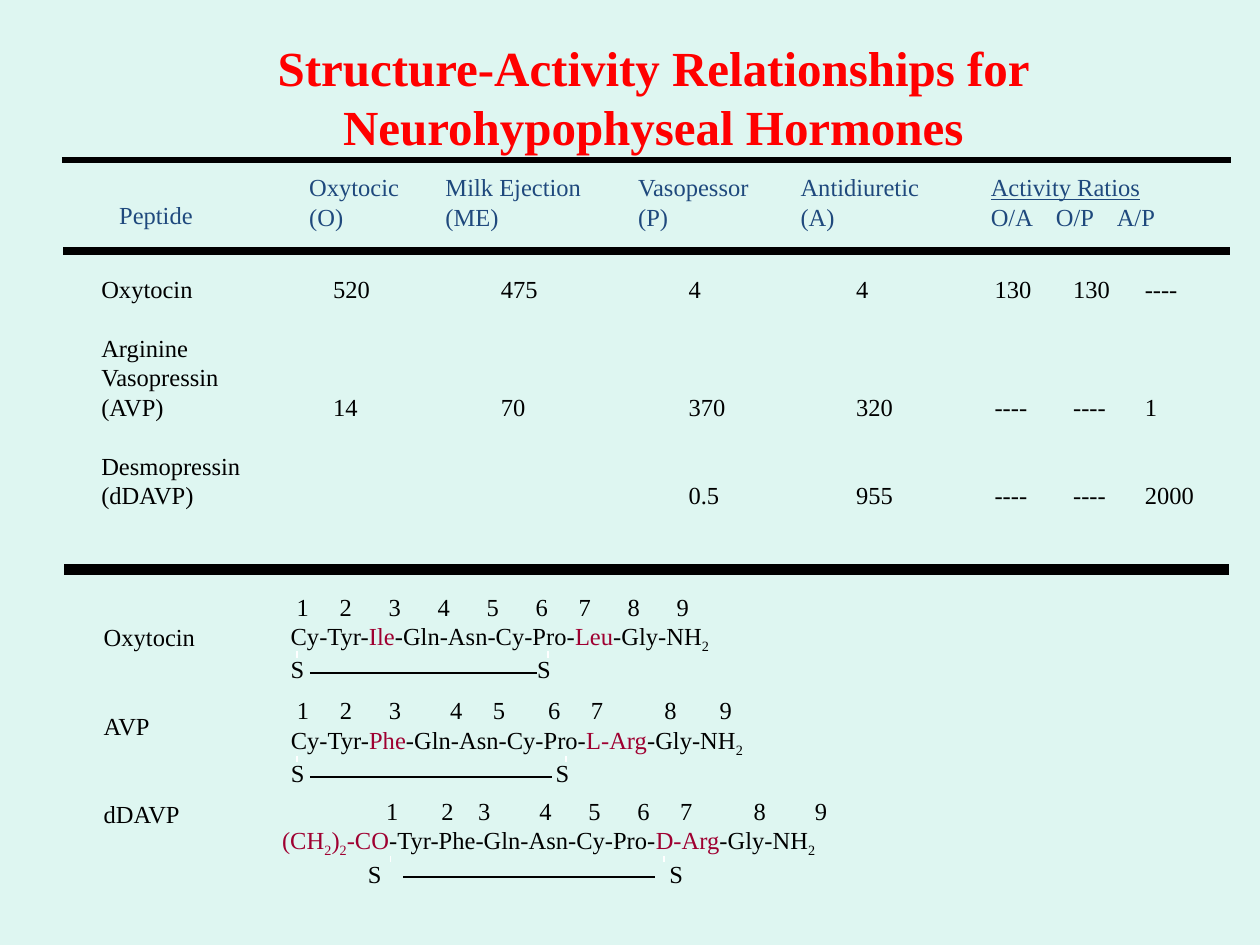
from itertools import accumulate

from lxml import etree
from pptx import Presentation
from pptx import util as u
from pptx.dml import color
from pptx.enum import shapes, text
from pptx.oxml import ns

INK, BLUE, RED, CRIMSON, WHITE = "000000", "1F497D", "FF0000", "9F0031", "FFFFFF"
BACKGROUND = "DEF6F1"
LINE = 16.86
SPACE, DIGIT = 3.5, 7


def rgb(value):
    return color.RGBColor.from_string(value)


class Deck:
    body = {"name": "Times New Roman", "size": u.Pt(14)}
    heading = {"name": "Times New Roman", "size": u.Pt(28), "bold": True}

    def __init__(self, width, height):
        self.file = Presentation()
        self.file.slide_width, self.file.slide_height = u.Pt(width), u.Pt(height)
        self.slide = self.file.slides.add_slide(self.file.slide_layouts[6])
        fill = self.slide.background.fill
        fill.solid()
        fill.fore_color.rgb = rgb(BACKGROUND)

    def box(self, left, top, width, height):
        frame = self.slide.shapes.add_textbox(*map(u.Pt, (left, top, width, height))).text_frame
        frame.word_wrap = True
        frame.vertical_anchor = text.MSO_ANCHOR.TOP
        return frame

    def paragraph(self, frame, first, before=0, tabs=()):
        line = frame.paragraphs[0] if first else frame.add_paragraph()
        line.space_before = u.Pt(0 if first else before)
        if tabs:
            stops = etree.SubElement(line._p.get_or_add_pPr(), ns.qn("a:tabLst"))
            for stop in tabs:
                etree.SubElement(stops, ns.qn("a:tab"), pos=str(u.Pt(stop)), algn="l")
        return line

    def run(self, line, words, ink=INK, style=None, subscript=False, **extra):
        piece = line.add_run()
        piece.text = words
        for attribute, value in {**(style or self.body), **extra}.items():
            setattr(piece.font, attribute, value)
        piece.font.color.rgb = rgb(ink)
        if subscript:
            piece._r.get_or_add_rPr().set("baseline", "-25000")

    def title(self, words, *place):
        line = self.paragraph(self.box(*place), True)
        line.alignment = text.PP_ALIGN.CENTER
        self.run(line, words, RED, self.heading)

    def header(self, lines, left, top, width, height, tabs=(), underline=False):
        frame = self.box(left, top, width, height)
        for index, words in enumerate(lines):
            line = self.paragraph(frame, index == 0, tabs=tabs if index else ())
            self.run(line, words, BLUE, underline=underline and index == 0)

    def column(self, entries, left, top, width, height):
        frame = self.box(left, top, width, height)
        for index, (words, skipped) in enumerate(entries):
            self.run(self.paragraph(frame, index == 0, skipped * LINE), words)

    def sequence(self, gaps, residues, bridge, sulfurs, left, top, width, height):
        frame = self.box(left, top, width, height)
        starts = [SPACE * total + DIGIT * index for index, total in enumerate(accumulate(gaps))]
        numbers = "".join(f"\t{index + 1}" for index in range(len(starts)))
        self.run(self.paragraph(frame, True, tabs=starts), numbers)
        chain = self.paragraph(frame, False)
        for words, ink, subscript in residues:
            self.run(chain, words, ink, subscript=subscript)
        self.run(self.paragraph(frame, False, tabs=sulfurs), bridge)

    def rule(self, x1, y1, x2, y2, weight, ink=INK):
        line = self.slide.shapes.add_connector(
            shapes.MSO_CONNECTOR.STRAIGHT, *map(u.Pt, (x1, y1, x2, y2)))
        line.line.width = u.Pt(weight)
        line.line.color.rgb = rgb(ink)
        etree.SubElement(line._element.spPr, ns.qn("a:effectLst"))


def plain(words):
    return words, INK, False


def changed(words):
    return words, CRIMSON, False


def sub(digit, ink=INK):
    return digit, ink, True


def main():
    deck = Deck(720, 540)
    deck.title("Structure-Activity Relationships for Neurohypophyseal Hormones",
               126, 18, 494.6, 48.2)

    for left, y, right, weight in ((35.3, 91.4, 703.4, 3), (36, 143.3, 702.7, 4.5),
                                   (36.7, 325.4, 702, 6)):
        deck.rule(left, y, right, y, weight)

    deck.header(["Peptide"], 61, 110.9, 62, 23.8)
    for lines, left, width in ((("Oxytocic", "(O)"), 169.6, 72),
                               (("Milk Ejection", "(ME)"), 247.5, 97),
                               (("Vasopessor", "(P)"), 357.6, 83),
                               (("Antidiuretic", "(A)"), 450.4, 88)):
        deck.header(lines, left, 95, width, 41)
    deck.header(["Activity Ratios", "O/A\tO/P\tA/P"], 559.1, 95, 113, 41, (37.2, 72), True)

    peptides = (("Oxytocin", 0), ("Arginine", 1), ("Vasopressin", 0), ("(AVP)", 0),
                ("Desmopressin", 1), ("(dDAVP)", 0))
    deck.column(peptides, 50.8, 153, 99, 142.6)
    for left, width, values in ((183.3, 39, ("520", "14")),
                                (279.1, 39, ("475", "70")),
                                (386.4, 39, ("4", "370", "0.5")),
                                (482.1, 39, ("4", "320", "955")),
                                (561.3, 39, ("130", "----", "----")),
                                (606.2, 39, ("130", "----", "----")),
                                (647.1, 47, ("----", "1", "2000"))):
        height = 142.6 if len(values) == 3 else 91.4
        deck.column(list(zip(values, (0, 3, 2))), left, 153, width, height)

    deck.column((("Oxytocin", 0), ("AVP", 2), ("dDAVP", 2)), 52.2, 352.1, 72, 126)

    tail = [plain("-Gly-NH"), sub("2")]
    middle = plain("-Gln-Asn-Cy-Pro-")
    oxytocin = [plain("Cy-Tyr-"), changed("Ile"), middle, changed("Leu"), *tail]
    vasopressin = [plain("Cy-Tyr-"), changed("Phe"), middle, changed("L-Arg"), *tail]
    desmopressin = [changed("(CH"), sub("2", CRIMSON), changed(")"), sub("2", CRIMSON),
                    changed("-CO"), plain("-Tyr-Phe-Gln-Asn-Cy-Pro-"),
                    changed("D-Arg"), *tail]
    for gaps, residues, bridge, sulfurs, left, top, width in (
            ((1, 5, 6, 6, 6, 6, 5, 6, 6), oxytocin, "S\tS", (140.8,), 159, 334.5, 303.1),
            ((1, 5, 6, 8, 5, 7, 5, 10, 7), vasopressin, "S\tS", (151.3,), 159.1, 393.8, 280),
            ((17, 7, 4, 8, 6, 6, 5, 10, 8), desmopressin, "\tS\tS", (49, 221.3),
             154.1, 451.2, 334)):
        deck.sequence(gaps, residues, bridge, sulfurs, left, top, width, 57.6)

    for start, end, y, bonds in ((177.1, 306.7, 384.5, (169.9, 313.2)),
                                 (177.1, 315.4, 444.2, (169.9, 323.3)),
                                 (230.4, 374.4, 501.1, (223.2, 379.4))):
        deck.rule(start, y, end, y, 1)
        for x in bonds:
            deck.rule(x, y - 12.2, x, y - 8.6, 1, WHITE)

    deck.file.save("out.pptx")


if __name__ == "__main__":
    main()
